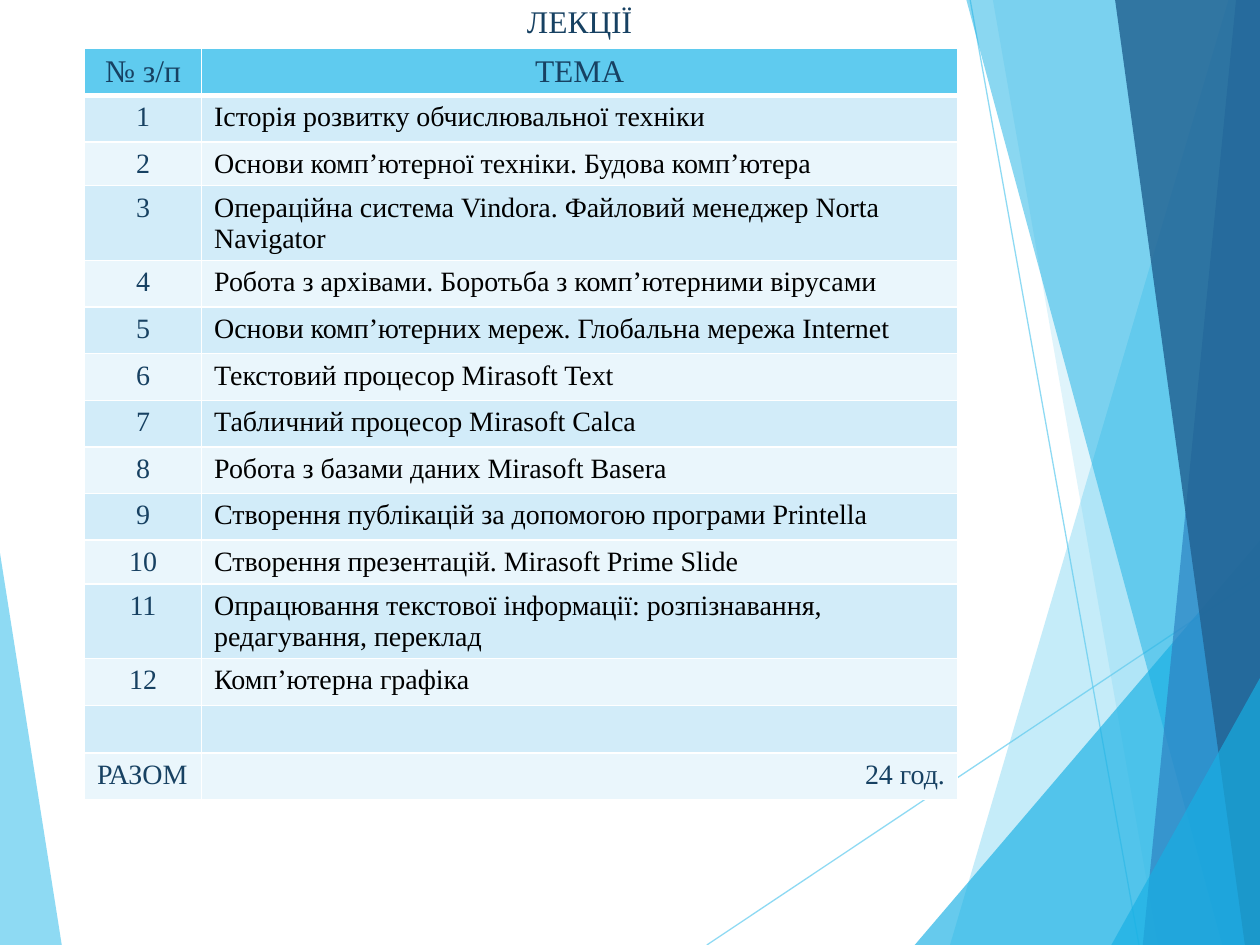
from lxml.etree import SubElement
from pptx import Presentation
from pptx.dml.color import RGBColor
from pptx.enum.shapes import MSO_CONNECTOR
from pptx.enum.text import PP_ALIGN as AL
from pptx.oxml import parse_xml
from pptx.oxml.ns import qn
from pptx.util import Inches, Pt

NS = 'xmlns:a="http://schemas.openxmlformats.org/drawingml/2006/main"'
NAVY, SKY, CYAN = "174162", "5FCBEF", "17B0E4"


def paint(color, hex_color, alpha=100):
    color.rgb = RGBColor.from_string(hex_color)
    if alpha < 100:
        node = color._xFill.find(qn("a:srgbClr"))
        SubElement(node, qn("a:alpha")).set("val", str(alpha * 1000))


def write(tf, text, size=16, color=NAVY, align=AL.LEFT):
    p = tf.paragraphs[0]
    p.alignment = align
    r = p.add_run()
    r.text = text
    r.font.name = "Times New Roman"
    r.font.size = Pt(size)
    r.font.bold = False
    paint(r.font.fill.fore_color if r.font.fill.solid() else r.font.fill.fore_color, color)


prs = Presentation()
prs.slide_width, prs.slide_height = Inches(10), Inches(7.5)
s = prs.slides.add_slide(prs.slide_layouts[6])

for x1, y1, x2, y2 in [(5.61, 7.5, 10, 4.57), (7.7, 0, 9.04, 7.5)]:
    line = s.shapes.add_connector(
        MSO_CONNECTOR.STRAIGHT, Inches(x1), Inches(y1), Inches(x2), Inches(y2))
    line.line.width = Pt(0.75)
    line.line.fill.solid()
    paint(line.line.fill.fore_color, SKY, 70)
    SubElement(line._element.spPr, qn("a:effectLst"))

facets = [
    ([(0, 4.39), (0.49, 7.5), (0, 7.5)], SKY, 70),
    ([(9.75, 0), (7.54, 7.5), (10, 7.5), (10, 0)], SKY, 36),
    ([(7.88, 0), (9.19, 7.5), (10, 7.5), (10, 0)], SKY, 20),
    ([(7.26, 7.5), (10, 4.29), (10, 7.5)], CYAN, 66),
    ([(7.67, 0), (9.7, 7.5), (10, 7.5), (10, 0)], CYAN, 50),
    ([(9.81, 0), (9.07, 7.5), (10, 7.5), (10, 0)], "2E83C3", 70),
    ([(8.85, 0), (9.88, 7.5), (10, 7.5), (10, 0)], "226292", 82),
    ([(8.82, 7.5), (10, 5.38), (10, 7.5)], CYAN, 66),
]
for points, color, alpha in facets:
    start, *rest = [(Inches(x), Inches(y)) for x, y in points]
    fb = s.shapes.build_freeform(*start)
    fb.add_line_segments(rest, close=True)
    sp = fb.convert_to_shape()
    sp.shadow.inherit = False
    sp.line.fill.background()
    sp.fill.solid()
    paint(sp.fill.fore_color, color, alpha)

topics = [
    "Історія розвитку обчислювальної техніки",
    "Основи комп’ютерної техніки. Будова комп’ютера",
    "Операційна система Vindora. Файловий менеджер Norta Navigator",
    "Робота з архівами. Боротьба з комп’ютерними вірусами",
    "Основи комп’ютерних мереж. Глобальна мережа Internet",
    "Текстовий процесор Mirasoft Text",
    "Табличний процесор Mirasoft Calca",
    "Робота з базами даних Mirasoft Basera",
    "Створення публікацій за допомогою програми Printella",
    "Створення презентацій. Mirasoft Prime Slide",
    "Опрацювання текстової інформації: розпізнавання, редагування, переклад",
    "Комп’ютерна графіка",
]
rows = [("№ з/п", "ТЕМА")]
rows += [(str(n), topic) for n, topic in enumerate(topics, 1)]
rows += [("", ""), ("РАЗОМ", "24 год.")]
total = len(rows) - 1
short_rows = {2: 0.31, 10: 0.33}

table = s.shapes.add_table(
    len(rows), 2, Inches(0.67), Inches(0.38), Inches(6.93), Inches(5.45)).table
table.columns[0].width, table.columns[1].width = Inches(0.93), Inches(6)
for i, row in enumerate(rows):
    table.rows[i].height = Inches(short_rows.get(i, 0.37))
    for j, text in enumerate(row):
        cell = table.cell(i, j)
        tcPr = cell._tc.get_or_add_tcPr()
        for side in "LRTB":
            heavy = (i, side) in [(0, "B"), (1, "T")]
            tcPr.append(parse_xml(
                f'<a:ln{side} {NS} w="{Pt(3 if heavy else 1)}"><a:solidFill>'
                f'<a:srgbClr val="FFFFFF"/></a:solidFill></a:ln{side}>'))
        cell.fill.solid()
        paint(cell.fill.fore_color, SKY if i == 0 else "D2ECF9" if i % 2 else "EAF6FC")
        if i == total:
            align = AL.RIGHT if j else AL.LEFT
        else:
            align = AL.LEFT if i and j else AL.CENTER
        write(cell.text_frame, text, size=16 if i else 18, align=align,
              color="000000" if j and 0 < i < total else NAVY)

tf = s.shapes.add_textbox(Inches(2.09), Inches(-0.03), Inches(5.02), Inches(0.4)).text_frame
tf.word_wrap = True
write(tf, "ЛЕКЦІЇ", size=18, align=AL.CENTER)

prs.save("out.pptx")
